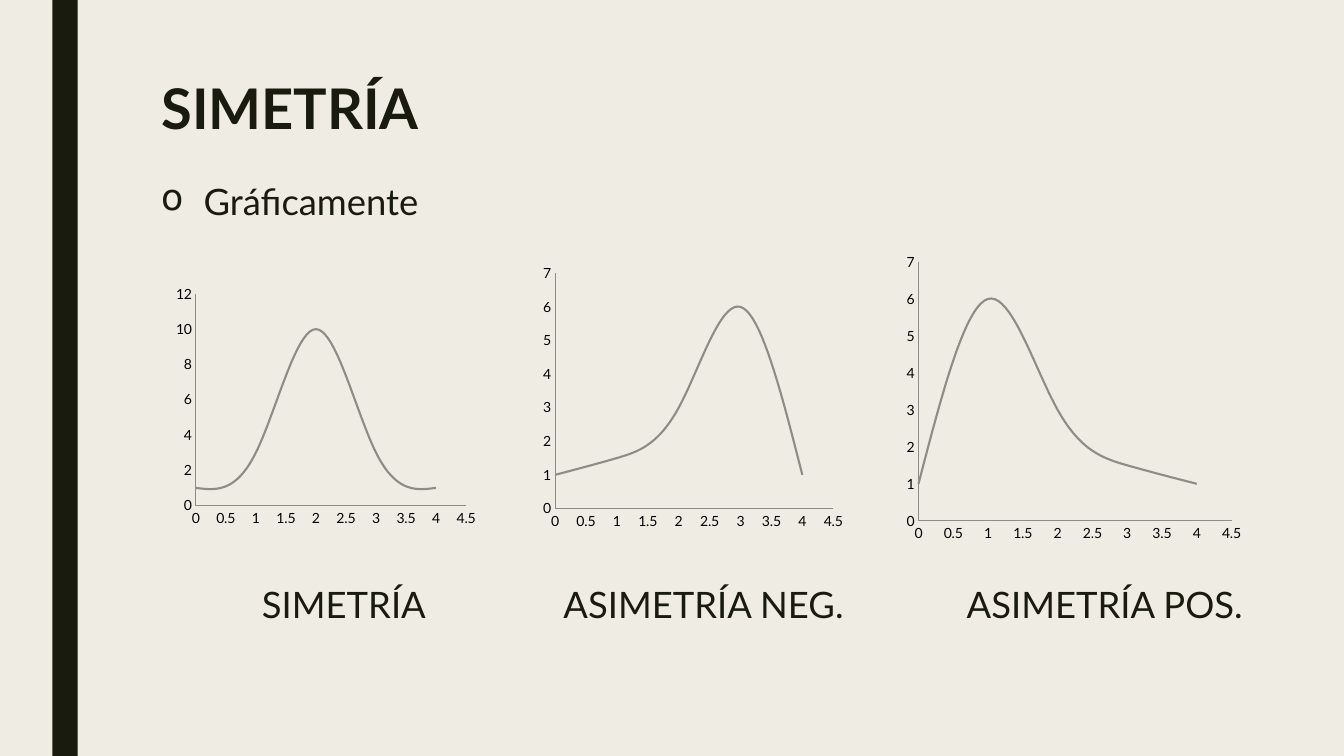
"""Build a slide comparing symmetric and skewed curves."""
from dataclasses import dataclass

from lxml import etree
from pptx import Presentation
from pptx import util as u
from pptx.chart.data import XyChartData
from pptx.dml.color import RGBColor
from pptx.enum import chart as charts, shapes, text
from pptx.oxml.ns import qn


@dataclass(frozen=True)
class Theme:
    """Colours, font and type sizes of the slide."""
    paper: RGBColor = RGBColor.from_string("EFEDE3")
    ink: RGBColor = RGBColor.from_string("191B0E")
    curve: RGBColor = RGBColor.from_string("8C8D86")
    label: RGBColor = RGBColor.from_string("000000")
    font: str = "Lato"
    title_size: int = 40
    body_size: int = 26
    axis_size: int = 10


@dataclass(frozen=True)
class Panel:
    """One curve with its chart box, inner plot fractions and caption."""
    caption: str
    caption_left: float
    box: tuple
    plot: tuple
    values: tuple
    top: int
    step: int


THEME = Theme()
PANELS = (
    Panel("SIMETRÍA", 2.6, (1.5, 2.76, 3.25, 2.6),
          (0.136, 0.06, 0.825, 0.808), (1, 3, 10, 3, 1), 12, 2),
    Panel("ASIMETRÍA NEG.", 5.59, (5.21, 2.56, 3.25, 2.87),
          (0.091, 0.053, 0.849, 0.813), (1, 1.5, 3, 6, 1), 7, 1),
    Panel("ASIMETRÍA POS.", 9.59, (8.92, 2.45, 3.45, 2.98),
          (0.055, 0.05, 0.9, 0.862), (1, 6, 3, 1.5, 1), 7, 1),
)


def inches(box):
    """Convert a box given in inches to lengths."""
    return [u.Inches(value) for value in box]


def style_font(font, size, color, bold=False):
    """Apply the theme font with a size and colour."""
    font.name = THEME.font
    font.size = u.Pt(size)
    font.bold = bold
    font.color.rgb = color


def add_side_bar(slide, box):
    """Draw the dark vertical bar."""
    bar = slide.shapes.add_shape(shapes.MSO_SHAPE.RECTANGLE, *inches(box))
    bar.shadow.inherit = False
    bar.fill.solid()
    bar.fill.fore_color.rgb = THEME.ink
    bar.line.fill.background()


def set_title(slide, box, words):
    """Place and format the title placeholder."""
    title = slide.shapes.title
    title.left, title.top, title.width, title.height = inches(box)
    title.text_frame.text = words
    title.text_frame.vertical_anchor = text.MSO_ANCHOR.MIDDLE
    para = title.text_frame.paragraphs[0]
    para.alignment = text.PP_ALIGN.LEFT
    para.line_spacing = 0.89
    style_font(para.font, THEME.title_size, THEME.ink, bold=True)


def add_line(slide, box, words):
    """Add one line of body text and return its paragraph."""
    frame = slide.shapes.add_textbox(*inches(box)).text_frame
    frame.word_wrap = True
    frame.text = words
    para = frame.paragraphs[0]
    para.line_spacing = 0.94
    style_font(para.font, THEME.body_size, THEME.ink)
    return para


def add_bullet_line(slide, box, words):
    """Add a line of body text with a hanging bullet."""
    properties = add_line(slide, box, words)._p.get_or_add_pPr()
    indent = u.Inches(0.42)
    properties.set("marL", str(indent))
    properties.set("indent", str(-indent))
    etree.SubElement(properties, qn("a:buChar")).set("char", "o")


def set_plot_area(chart, fractions):
    """Fix the inner plot area as fractions of the chart."""
    area = chart._chartSpace.find(".//" + qn("c:plotArea"))
    for previous in area.findall(qn("c:layout")):
        area.remove(previous)
    layout = etree.Element(qn("c:layout"))
    manual = etree.SubElement(layout, qn("c:manualLayout"))
    settings = [("layoutTarget", "inner"), ("xMode", "edge"), ("yMode", "edge")]
    settings += zip("xywh", fractions)
    for name, value in settings:
        etree.SubElement(manual, qn(f"c:{name}")).set("val", str(value))
    area.insert(0, layout)


def format_axis(axis, maximum, step):
    """Set the scale of an axis and strip its ticks and gridlines."""
    axis.minimum_scale = 0
    axis.maximum_scale = maximum
    axis.major_unit = step
    axis.has_major_gridlines = False
    axis.major_tick_mark = charts.XL_TICK_MARK.NONE
    axis.minor_tick_mark = charts.XL_TICK_MARK.NONE
    axis.format.line.color.rgb = THEME.curve
    axis.format.line.width = u.Pt(0.75)


def add_curve(slide, panel):
    """Add the smooth scatter chart of one panel."""
    data = XyChartData()
    points = data.add_series("Series 1")
    for x, y in enumerate(panel.values):
        points.add_data_point(x, y)
    kind = charts.XL_CHART_TYPE.XY_SCATTER_SMOOTH_NO_MARKERS
    chart = slide.shapes.add_chart(kind, *inches(panel.box), data).chart
    chart.has_title = False
    chart.has_legend = False
    style_font(chart.font, THEME.axis_size, THEME.label)
    plot = chart.plots[0]
    plot.vary_by_categories = False
    series = plot.series[0]
    series.format.line.color.rgb = THEME.curve
    series.format.line.width = u.Pt(1.5)
    series.marker.style = charts.XL_MARKER_STYLE.NONE
    series._element.find(qn("c:smooth")).set("val", "1")
    format_axis(chart.category_axis, 4.5, 0.5)
    format_axis(chart.value_axis, panel.top, panel.step)
    set_plot_area(chart, panel.plot)


def add_panel(slide, panel):
    """Add a curve and the caption below it."""
    add_curve(slide, panel)
    add_line(slide, (panel.caption_left - 0.1, 5.76, 3.1, 0.51), panel.caption)


def build_symmetry_slide(deck):
    """Compose the whole slide."""
    slide = deck.slides.add_slide(deck.slide_layouts[5])
    slide.background.fill.solid()
    slide.background.fill.fore_color.rgb = THEME.paper
    add_side_bar(slide, (0.52, 0, 0.25, 7.5))
    set_title(slide, (1.5, 0.75, 10.5, 0.71), "SIMETRÍA")
    add_bullet_line(slide, (1.5, 1.76, 11.31, 0.51), "Gráficamente")
    for panel in PANELS:
        add_panel(slide, panel)


def main():
    """Create and save the deck."""
    deck = Presentation()
    deck.slide_width, deck.slide_height = inches((13.33, 7.5))
    build_symmetry_slide(deck)
    deck.save("out.pptx")


if __name__ == "__main__":
    main()
